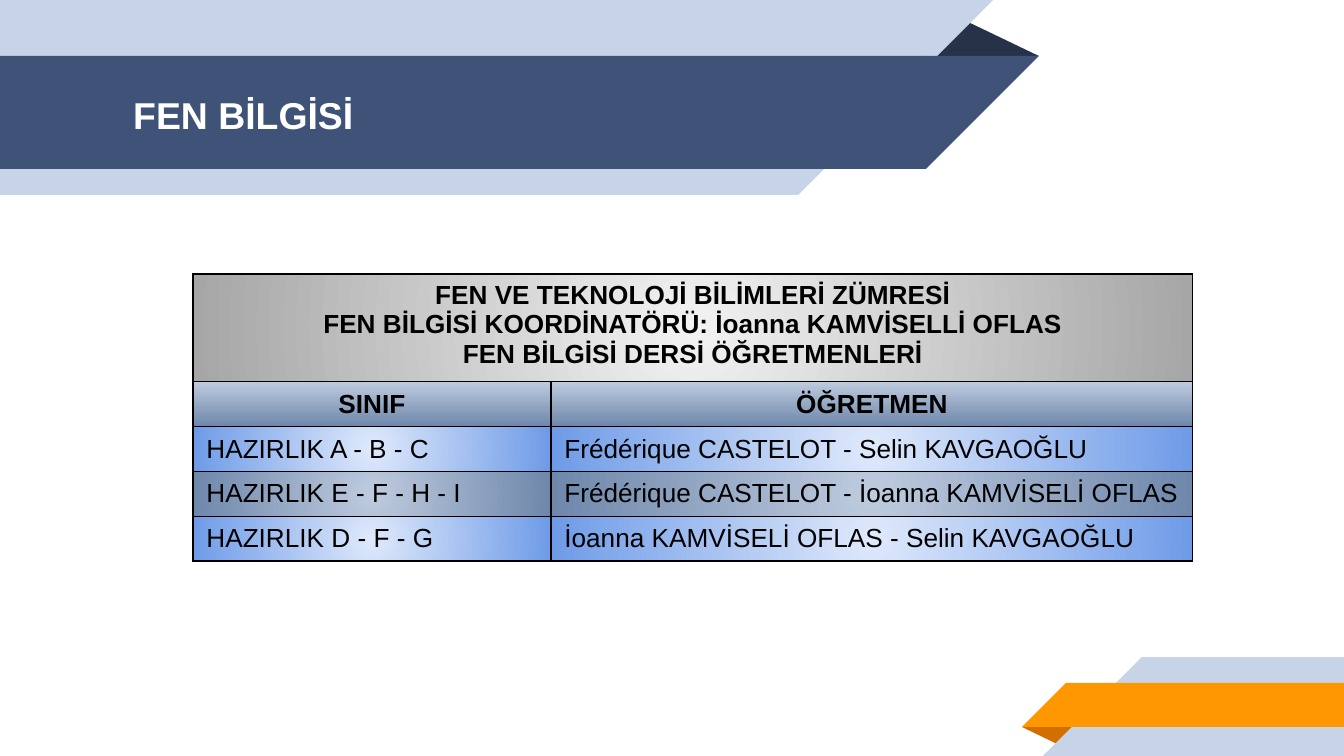
"""Build the science department slide: ribbons, title and teacher table."""
from lxml import etree
from pptx import Presentation
from pptx.dml.color import RGBColor
from pptx.enum.shapes import MSO_SHAPE
from pptx.enum.text import MSO_ANCHOR, PP_ALIGN
from pptx.oxml.ns import qn
from pptx.util import Emu, Pt

RECTANGLE = MSO_SHAPE.RECTANGLE
RIGHT_TRIANGLE = MSO_SHAPE.RIGHT_TRIANGLE
TRIANGLE = MSO_SHAPE.ISOSCELES_TRIANGLE
MIDDLE, TOP = MSO_ANCHOR.MIDDLE, MSO_ANCHOR.TOP
CENTER, LEFT = PP_ALIGN.CENTER, PP_ALIGN.LEFT

WHITE = RGBColor(0xFF, 0xFF, 0xFF)
BLACK = RGBColor(0x00, 0x00, 0x00)
PALE = RGBColor(0xC7, 0xD3, 0xE6)
NAVY = RGBColor(0x3F, 0x53, 0x78)
DARK_NAVY = RGBColor(0x26, 0x32, 0x48)
ORANGE = RGBColor(0xFF, 0x98, 0x00)
DARK_ORANGE = RGBColor(0xD2, 0x6F, 0x00)
GREY = (RGBColor(0xF2, 0xF2, 0xF2), RGBColor(0xA6, 0xA6, 0xA6))
STEEL = (RGBColor(0xBE, 0xCB, 0xDE), RGBColor(0x6E, 0x87, 0xAB))
BLUE = (RGBColor(0xDF, 0xE9, 0xFB), RGBColor(0x6E, 0x9B, 0xE7))

FONT = "Arial"
SLIDE_WIDTH, SLIDE_HEIGHT = 1344, 756
TITLE = "FEN BİLGİSİ"
TITLE_PLACE = (120, 58, 773, 113)
HEADING = """FEN VE TEKNOLOJİ BİLİMLERİ ZÜMRESİ
FEN BİLGİSİ KOORDİNATÖRÜ: İoanna KAMVİSELLİ OFLAS
FEN BİLGİSİ DERSİ ÖĞRETMENLERİ"""
COLUMN_NAMES = ("SINIF", "ÖĞRETMEN")
CLASSES = [
    ("HAZIRLIK A - B - C", "Frédérique CASTELOT - Selin KAVGAOĞLU"),
    ("HAZIRLIK E - F - H - I", "Frédérique CASTELOT - İoanna KAMVİSELİ OFLAS"),
    ("HAZIRLIK D - F - G", "İoanna KAMVİSELİ OFLAS - Selin KAVGAOĞLU"),
]
TABLE_LEFT, TABLE_TOP = 193, 274
COLUMN_WIDTHS = (358, 178, 166, 298)
ROW_HEIGHTS = (102, 43, 43, 43, 43)

# (left, top, width, height, rotation, colour)
TOP_FOLD = (925, 19, 114, 37, 0, DARK_NAVY)
BOTTOM_FOLD = (1022, 727, 58, 19, 180, DARK_ORANGE)
# (top, height, straight width, colour)
TOP_RIBBONS = [(0, 195, 798, PALE), (56, 113, 926, NAVY)]
BOTTOM_RIBBONS = [(657, 99, 202, PALE), (683, 44, 278, ORANGE)]


def px(value):
    return Emu(round(value * 914400 / 134.4))


def add_part(slide, kind, left, top, width, height, rotation, colour):
    shape = slide.shapes.add_shape(kind, px(left), px(top), px(width), px(height))
    shape.shadow.inherit = False
    shape.rotation = rotation
    shape.fill.solid()
    shape.fill.fore_color.rgb = colour
    shape.line.fill.background()
    return shape


def add_ribbons(slide, fold, ribbons, from_left):
    add_part(slide, TRIANGLE, *fold).adjustments[0] = 0.324
    for top, height, width, colour in ribbons:
        left = 0 if from_left else SLIDE_WIDTH - width
        tip_left, rotation = (width, 90) if from_left else (left - height, 270)
        add_part(slide, RECTANGLE, left, top, width, height, 0, colour)
        add_part(slide, RIGHT_TRIANGLE, tip_left, top, height, height, rotation, colour)


def style_text(frame, size, colour, bold, alignment):
    for para in frame.paragraphs:
        para.alignment = alignment
        para.font.name = FONT
        para.font.size = Pt(size)
        para.font.bold = bold
        para.font.color.rgb = colour


def add_child(parent, tag, **attributes):
    return etree.SubElement(parent, qn(tag), attributes)


def add_borders(cell):
    properties = cell._tc.get_or_add_tcPr()
    for side in ("a:lnL", "a:lnR", "a:lnT", "a:lnB"):
        line = add_child(properties, side, w=str(Pt(0.75)))
        add_child(add_child(line, "a:solidFill"), "a:srgbClr", val=str(BLACK))


def add_gradient(cell, colours, radial):
    gradient = add_child(cell._tc.get_or_add_tcPr(), "a:gradFill", rotWithShape="1")
    stops = add_child(gradient, "a:gsLst")
    for position, colour in zip(("0", "100000"), colours):
        add_child(add_child(stops, "a:gs", pos=position), "a:srgbClr", val=str(colour))
    if radial:
        path = add_child(gradient, "a:path", path="circle")
        add_child(path, "a:fillToRect", l="50000", t="50000", r="50000", b="50000")
    else:
        add_child(gradient, "a:lin", ang="5400000", scaled="0")


def fill_cell(cell, text, colours, radial, bold, alignment, anchor=MIDDLE):
    cell.text = text
    cell.vertical_anchor = anchor
    style_text(cell.text_frame, 14, BLACK, bold, alignment)
    add_gradient(cell, colours, radial)


def add_teacher_table(slide):
    frame = slide.shapes.add_table(
        len(ROW_HEIGHTS), len(COLUMN_WIDTHS), px(TABLE_LEFT), px(TABLE_TOP),
        px(sum(COLUMN_WIDTHS)), px(sum(ROW_HEIGHTS)))
    table = frame.table
    table.first_row = table.horz_banding = False
    for column, width in zip(table.columns, COLUMN_WIDTHS):
        column.width = px(width)
    for row, height in zip(table.rows, ROW_HEIGHTS):
        row.height = px(height)
    for cell in table.iter_cells():
        add_borders(cell)
    last = len(COLUMN_WIDTHS) - 1
    for index in range(len(ROW_HEIGHTS)):
        table.cell(index, min(index, 1)).merge(table.cell(index, last))

    fill_cell(table.cell(0, 0), HEADING, GREY, True, True, CENTER, TOP)
    for column, name in enumerate(COLUMN_NAMES):
        fill_cell(table.cell(1, column), name, STEEL, False, True, CENTER)
    for index, entry in enumerate(CLASSES):
        colours = STEEL if index % 2 else BLUE
        for column, text in enumerate(entry):
            fill_cell(table.cell(index + 2, column), text, colours, True, False, LEFT)


def add_title(slide):
    box = slide.shapes.add_textbox(*map(px, TITLE_PLACE))
    frame = box.text_frame
    frame.word_wrap = True
    frame.vertical_anchor = MIDDLE
    frame.text = TITLE
    style_text(frame, 20, WHITE, True, LEFT)


def main():
    deck = Presentation()
    deck.slide_width, deck.slide_height = px(SLIDE_WIDTH), px(SLIDE_HEIGHT)
    slide = deck.slides.add_slide(deck.slide_layouts[6])
    add_ribbons(slide, TOP_FOLD, TOP_RIBBONS, True)
    add_ribbons(slide, BOTTOM_FOLD, BOTTOM_RIBBONS, False)
    add_title(slide)
    add_teacher_table(slide)
    deck.save("out.pptx")


if __name__ == "__main__":
    main()
